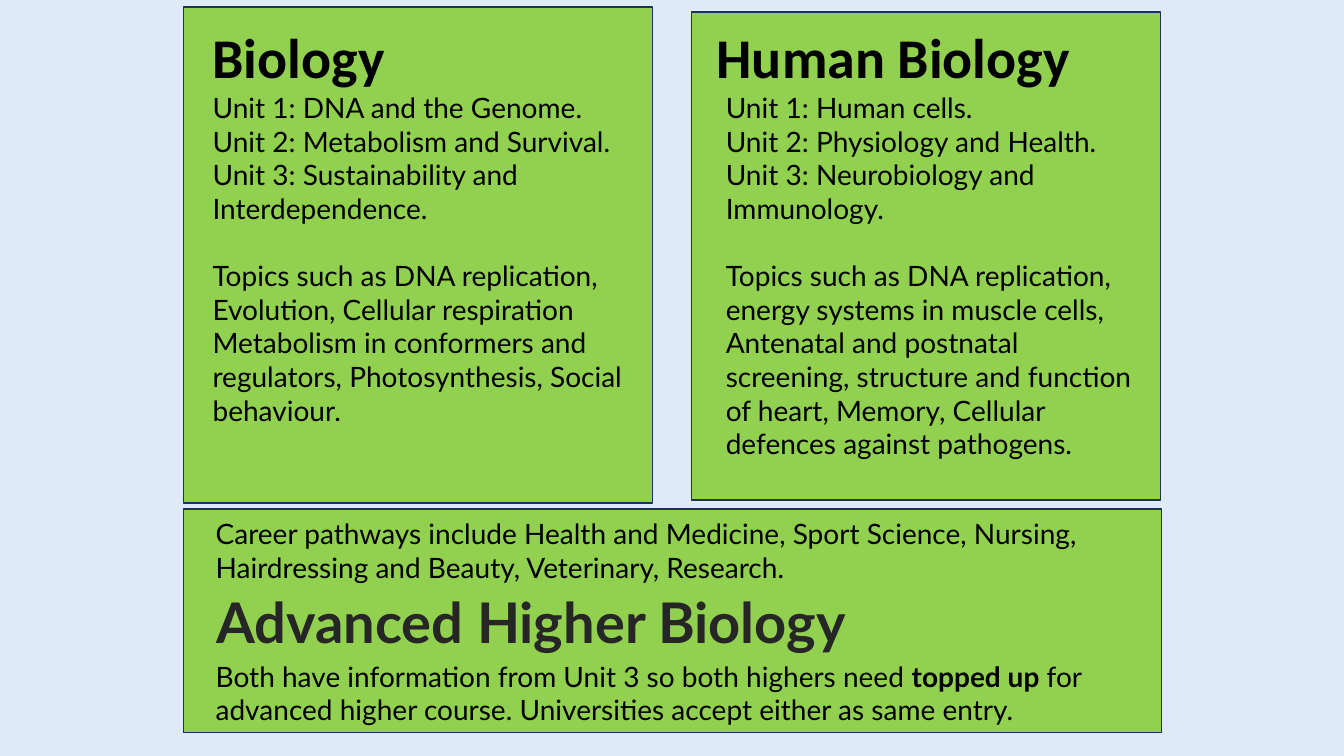
from pptx import Presentation
from pptx.dml.color import RGBColor as Rgb
from pptx.enum.shapes import MSO_SHAPE as Kind
from pptx.enum.text import MSO_ANCHOR as Anchor
from pptx.util import Inches, Pt

SKY = Rgb(0xDE, 0xEB, 0xF7)
GREEN = Rgb(0x92, 0xD0, 0x50)
NAVY = Rgb(0x1E, 0x32, 0x56)
BLACK = Rgb(0, 0, 0)
GREY = Rgb(0x26, 0x26, 0x26)


class Board:
    def __init__(self, slide, font="Lato", size=20):
        self.slide = slide
        self.font = font
        self.size = size
        fill = slide.background.fill
        fill.solid()
        fill.fore_color.rgb = SKY

    def panel(self, *box):
        shape = self.slide.shapes.add_shape(Kind.RECTANGLE, *map(Inches, box))
        shape.shadow.inherit = False
        shape.fill.solid()
        shape.fill.fore_color.rgb = GREEN
        shape.line.color.rgb = NAVY
        shape.line.width = Pt(1)

    def frame(self, *box):
        frame = self.slide.shapes.add_textbox(*map(Inches, box)).text_frame
        frame.word_wrap = True
        return frame

    def run(self, para, text, bold=False, size=None, font=None, color=BLACK):
        run = para.add_run()
        run.text = text
        run.font.name = font or self.font
        run.font.size = Pt(size or self.size)
        run.font.bold = bold
        run.font.color.rgb = color

    def head(self, text, box, font=None, color=BLACK, anchor=Anchor.TOP, pitch=1.0):
        frame = self.frame(*box)
        frame.vertical_anchor = anchor
        para = frame.paragraphs[0]
        para.line_spacing = pitch
        self.run(para, text, True, 40, font, color)

    def units(self, names, topics, box):
        frame = self.frame(*box)
        para = frame.paragraphs[0]
        for num, name in enumerate(names, 1):
            self.run(para, f"Unit {num}: {name}.")
            para = frame.add_paragraph()
        para.space_before = Pt(24)
        self.run(para, f"Topics such as {topics}.")

    def note(self, parts, box):
        para = self.frame(*box).paragraphs[0]
        for text, bold in parts:
            self.run(para, text, bold)


COURSES = [
    ("Biology", (1.82, 0.07, 4.65, 4.92), 2.01, 2.01, 3.47,
     ["DNA and the Genome", "Metabolism and Survival",
      "Sustainability and Interdependence"],
     "DNA replication, Evolution, Cellular respiration Metabolism in "
     "conformers and regulators, Photosynthesis, Social behaviour"),
    ("Human Biology", (6.86, 0.12, 4.65, 4.84), 7.01, 7.1, 4.14,
     ["Human cells", "Physiology and Health", "Neurobiology and Immunology"],
     "DNA replication, energy systems in muscle cells, Antenatal and postnatal "
     "screening, structure and function of heart, Memory, Cellular defences "
     "against pathogens"),
]


def main():
    deck = Presentation()
    deck.slide_width = Inches(13.33)
    deck.slide_height = Inches(7.5)
    board = Board(deck.slides.add_slide(deck.slide_layouts[6]))

    for title, panel, left, inset, tall, names, topics in COURSES:
        board.panel(*panel)
        board.head(title, (left, 0.07, 4.32, 1.05), "Calibri",
                   anchor=Anchor.MIDDLE, pitch=0.9)
        board.units(names, topics, (inset, 0.85, 4.32, tall))

    board.panel(1.82, 5.05, 9.7, 2.22)
    board.note([("Career pathways include Health and Medicine, Sport Science, Nursing, "
                 "Hairdressing and Beauty, Veterinary, Research.", False)],
               (2.04, 5.08, 9.25, 0.77))
    board.head("Advanced Higher Biology", (2.05, 5.78, 9.66, 1.05), color=GREY)
    board.note([("Both have information from Unit 3 so both highers need ", False),
                ("topped up", True),
                (" for advanced higher course. Universities accept either as same entry.",
                 False)],
               (2.04, 6.49, 9.25, 0.77))
    deck.save("out.pptx")


if __name__ == "__main__":
    main()
